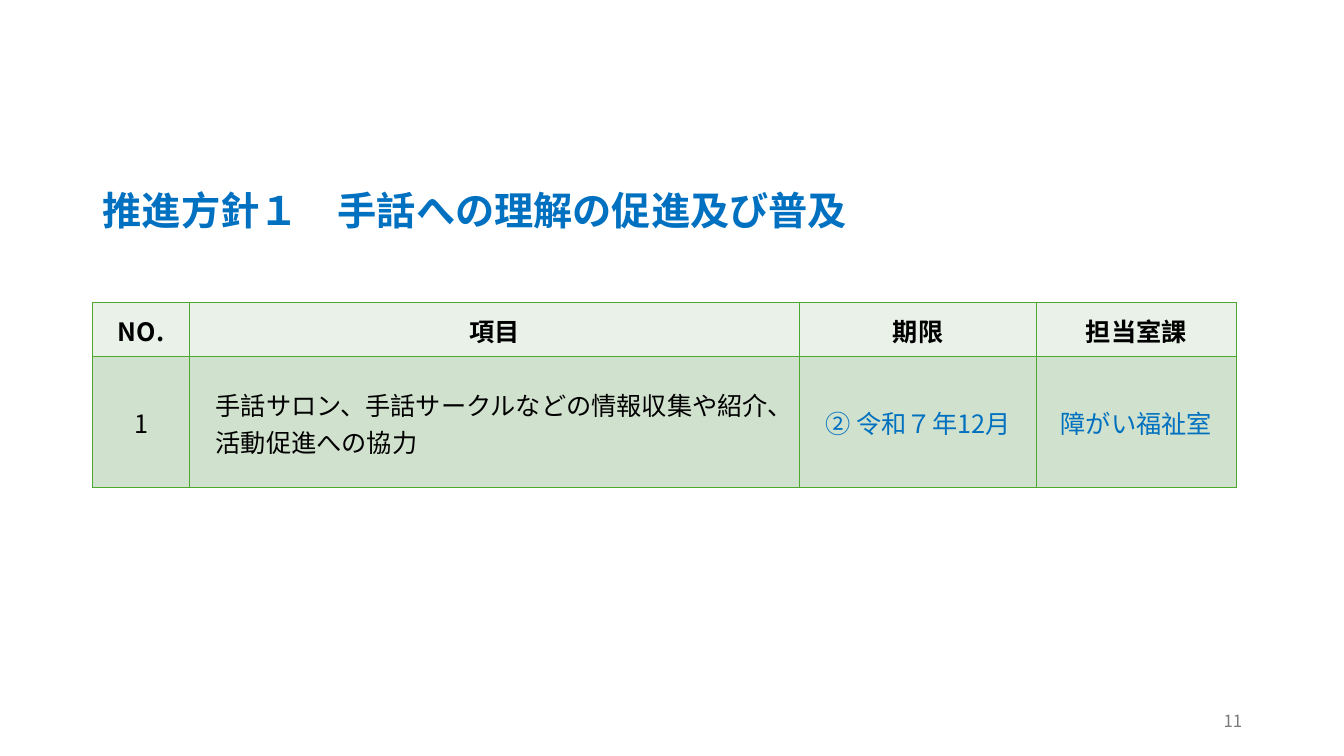
import lxml.etree
import pptx
import pptx.dml.color
import pptx.enum.text
import pptx.oxml.ns
import pptx.util

RGBColor = pptx.dml.color.RGBColor
BLUE = RGBColor(0x00, 0x70, 0xC0)
BLACK = RGBColor(0x00, 0x00, 0x00)
GRAY = RGBColor(0x79, 0x79, 0x79)
GREEN = RGBColor(0x4E, 0xA7, 0x2E)
HEADER_FILL = RGBColor(0xE9, 0xF1, 0xE8)
BODY_FILL = RGBColor(0xD0, 0xE1, 0xCD)

FONT = "Noto Sans CJK JP"
LEFT = pptx.enum.text.PP_ALIGN.LEFT
CENTER = pptx.enum.text.PP_ALIGN.CENTER
RIGHT = pptx.enum.text.PP_ALIGN.RIGHT
MIDDLE = pptx.enum.text.MSO_ANCHOR.MIDDLE
Inches = pptx.util.Inches
Pt = pptx.util.Pt

MARGIN = 0.92
COLUMN_WIDTHS = (0.96, 6.05, 2.35, 1.98)
ROW_HEIGHTS = (0.54, 1.3)
HEADERS = ("NO.", "項目", "期限", "担当室課")
ITEM = (
    (("1",), CENTER, BLACK),
    (("　手話サロン、手話サークルなどの情報収集や紹介、", "　活動促進への協力"), LEFT, BLACK),
    (("② 令和７年12月",), CENTER, BLUE),
    (("障がい福祉室",), CENTER, BLUE),
)


def add_child(parent, tag, **attributes):
    return lxml.etree.SubElement(parent, pptx.oxml.ns.qn(tag), **attributes)


def write_text(frame, lines, size, color, alignment, bold=False):
    for index, line in enumerate(lines):
        paragraph = frame.add_paragraph() if index else frame.paragraphs[0]
        paragraph.alignment = alignment
        run = paragraph.add_run()
        run.text = line
        run.font.size = Pt(size)
        run.font.bold = bold
        run.font.color.rgb = color
        run.font.name = FONT
        add_child(run.font._element, "a:ea", typeface=FONT)


def add_heading(slide):
    title = slide.shapes.title
    title.left, title.top = Inches(MARGIN), Inches(1.85)
    title.width, title.height = Inches(sum(COLUMN_WIDTHS)), Inches(0.8)
    frame = title.text_frame
    frame.auto_size = pptx.enum.text.MSO_AUTO_SIZE.NONE
    frame.vertical_anchor = pptx.enum.text.MSO_ANCHOR.TOP
    write_text(frame, ("推進方針１　手話への理解の促進及び普及",), 28, BLUE, LEFT, True)
    paragraph = frame.paragraphs[0]
    paragraph.line_spacing = 0.9
    paragraph.space_before, paragraph.space_after = Pt(10), Pt(6)


def add_page_number(slide):
    box = slide.shapes.add_textbox(Inches(9.42), Inches(6.95), Inches(3), Inches(0.4))
    frame = box.text_frame
    frame.word_wrap = True
    frame.vertical_anchor = MIDDLE
    write_text(frame, ("11",), 12, GRAY, RIGHT)


def add_borders(cell):
    properties = cell._tc.get_or_add_tcPr()
    for side in ("a:lnL", "a:lnR", "a:lnT", "a:lnB"):
        line = add_child(properties, side, w=str(Pt(1)))
        add_child(add_child(line, "a:solidFill"), "a:srgbClr", val=str(GREEN))


def fill_cell(cell, lines, alignment, color, fill, bold=False):
    add_borders(cell)
    cell.fill.solid()
    cell.fill.fore_color.rgb = fill
    cell.vertical_anchor = MIDDLE
    cell.margin_left = cell.margin_right = cell.margin_top = Inches(0.01)
    cell.margin_bottom = 0
    write_text(cell.text_frame, lines, 18, color, alignment, bold)


def add_item_table(slide):
    table = slide.shapes.add_table(
        len(ROW_HEIGHTS), len(COLUMN_WIDTHS), Inches(MARGIN), Inches(3),
        Inches(sum(COLUMN_WIDTHS)), Inches(sum(ROW_HEIGHTS))).table
    for column, width in zip(table.columns, COLUMN_WIDTHS):
        column.width = Inches(width)
    for row, height in zip(table.rows, ROW_HEIGHTS):
        row.height = Inches(height)
    for index, (header, item) in enumerate(zip(HEADERS, ITEM)):
        fill_cell(table.cell(0, index), (header,), CENTER, BLACK, HEADER_FILL, True)
        fill_cell(table.cell(1, index), *item, BODY_FILL)


def main():
    presentation = pptx.Presentation()
    presentation.slide_width = Inches(13.33)
    presentation.slide_height = Inches(7.5)
    slide = presentation.slides.add_slide(presentation.slide_layouts[5])
    add_heading(slide)
    add_page_number(slide)
    add_item_table(slide)
    presentation.save("out.pptx")


if __name__ == "__main__":
    main()
